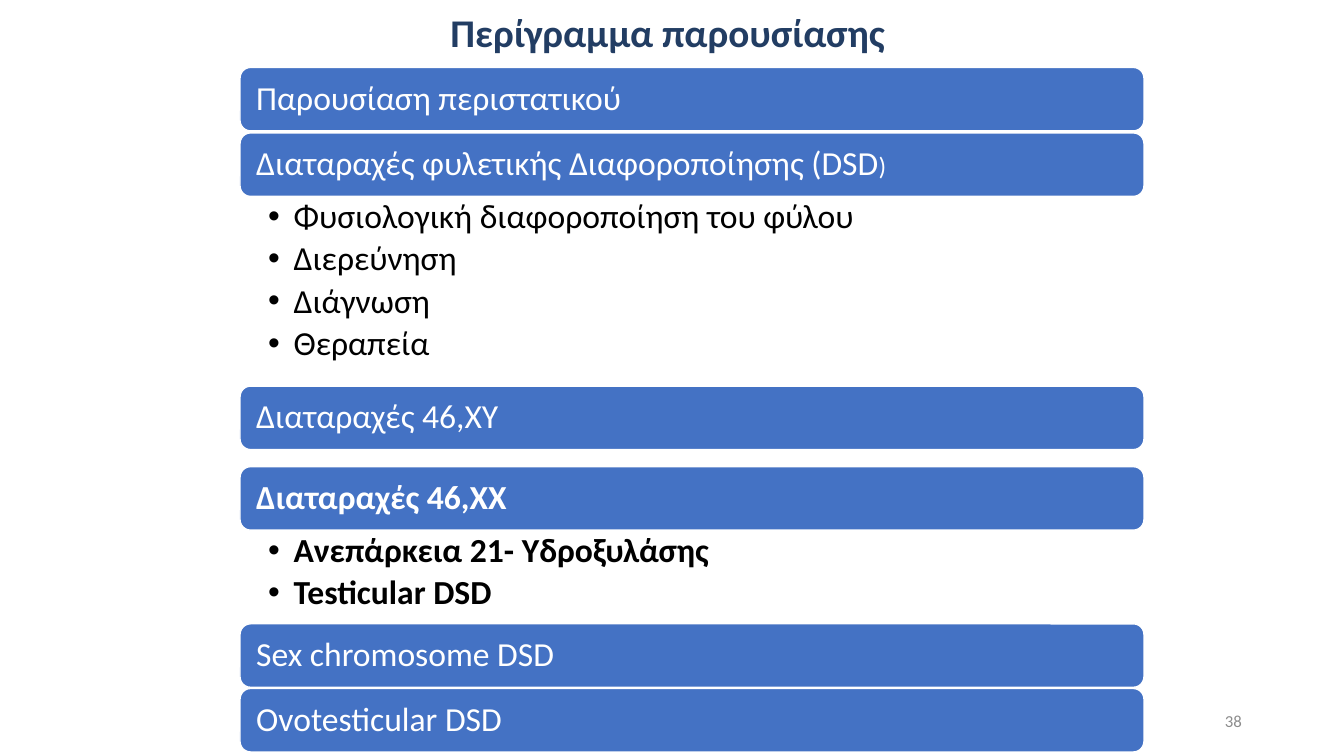
from lxml.etree import SubElement
from pptx import Presentation
from pptx.dml.color import RGBColor
from pptx.enum.shapes import MSO_SHAPE
from pptx.enum.text import MSO_ANCHOR, PP_ALIGN
from pptx.oxml.ns import qn
from pptx.util import Cm, Pt

NAVY = RGBColor(0x22, 0x3D, 0x63)
BLUE = RGBColor(0x44, 0x72, 0xC4)
WHITE = RGBColor(0xFF, 0xFF, 0xFF)
BLACK = RGBColor(0x00, 0x00, 0x00)
GRAY = RGBColor(0x8C, 0x8C, 0x8C)

LEFT, WIDTH, BAR_HEIGHT = Cm(6.05), Cm(22.78), Cm(1.6)


def set_frame(tf, anchor, left, top, right, bottom):
    tf.word_wrap = True
    tf.vertical_anchor = anchor
    tf.margin_left, tf.margin_top = Cm(left), Cm(top)
    tf.margin_right, tf.margin_bottom = Cm(right), Cm(bottom)


def add_run(p, text, size, color, bold=False):
    r = p.add_run()
    r.text = text
    r.font.name = "Calibri"
    r.font.size = Pt(size)
    r.font.bold = bold
    r.font.color.rgb = color


prs = Presentation()
prs.slide_width, prs.slide_height = Cm(33.87), Cm(19.05)
s = prs.slides.add_slide(prs.slide_layouts[5])

# Title
title = s.shapes.title
title.left, title.top = Cm(0), Cm(0)
title.width, title.height = prs.slide_width, Cm(1.75)
set_frame(title.text_frame, MSO_ANCHOR.MIDDLE, 0.25, 0.13, 0.25, 0.13)
p = title.text_frame.paragraphs[0]
p.alignment = PP_ALIGN.CENTER
p.line_spacing = 0.9
add_run(p, "Περίγραμμα παρουσίασης ", 28, NAVY, True)

# Outline sections: top, bold, heading runs with sizes, bullets
sections = [
    (1.7, False, [("Παρουσίαση περιστατικού", 24)], []),
    (3.35, False, [("Διαταραχές φυλετικής Διαφοροποίησης (DSD", 24), (")", 18)],
     ["Φυσιολογική διαφοροποίηση του φύλου", "Διερεύνηση", "Διάγνωση", "Θεραπεία"]),
    (9.73, False, [("Διαταραχές 46,ΧΥ", 24)], []),
    (11.76, True, [("Διαταραχές 46,ΧΧ", 24)],
     ["Ανεπάρκεια 21- Υδροξυλάσης", "Testicular DSD"]),
    (15.72, False, [("Sex chromosome DSD", 24)], []),
    (17.35, False, [("Ovotesticular DSD", 24)], []),
]

for top, bold, heading, bullets in sections:
    # Heading bar
    sp = s.shapes.add_shape(MSO_SHAPE.ROUNDED_RECTANGLE, LEFT, Cm(top), WIDTH, BAR_HEIGHT)
    sp.shadow.inherit = False
    sp.fill.solid()
    sp.fill.fore_color.rgb = BLUE
    sp.line.color.rgb = WHITE
    sp.line.width = Pt(1)
    set_frame(sp.text_frame, MSO_ANCHOR.MIDDLE, 0.33, 0.25, 0.33, 0.25)
    p = sp.text_frame.paragraphs[0]
    p.alignment = PP_ALIGN.LEFT
    p.line_spacing = 0.9
    for text, size in heading:
        add_run(p, text, size, WHITE, bold)

    # Bullets under the bar
    if bullets:
        box = s.shapes.add_textbox(LEFT, Cm(top) + BAR_HEIGHT, WIDTH, Cm(1.19 * len(bullets)))
        tf = box.text_frame
        set_frame(tf, MSO_ANCHOR.TOP, 0.71, 0.08, 0.48, 0.08)
        for i, text in enumerate(bullets):
            p = tf.add_paragraph() if i else tf.paragraphs[0]
            p.level = 1
            pPr = p._p.get_or_add_pPr()
            pPr.set("marL", str(Cm(0.64)))
            pPr.set("indent", str(-Cm(0.64)))
            SubElement(pPr, qn("a:buFont")).set("typeface", "Arial")
            SubElement(pPr, qn("a:buChar")).set("char", "•")
            p.line_spacing = 0.9
            p.space_after = Pt(4.3)
            add_run(p, text, 24, BLACK, bold)

# Slide number
box = s.shapes.add_textbox(Cm(23.93), Cm(17.65), Cm(7.62), Cm(1.02))
set_frame(box.text_frame, MSO_ANCHOR.MIDDLE, 0.25, 0.13, 0.25, 0.13)
p = box.text_frame.paragraphs[0]
p.alignment = PP_ALIGN.RIGHT
add_run(p, "38", 12, GRAY)

prs.save("out.pptx")
